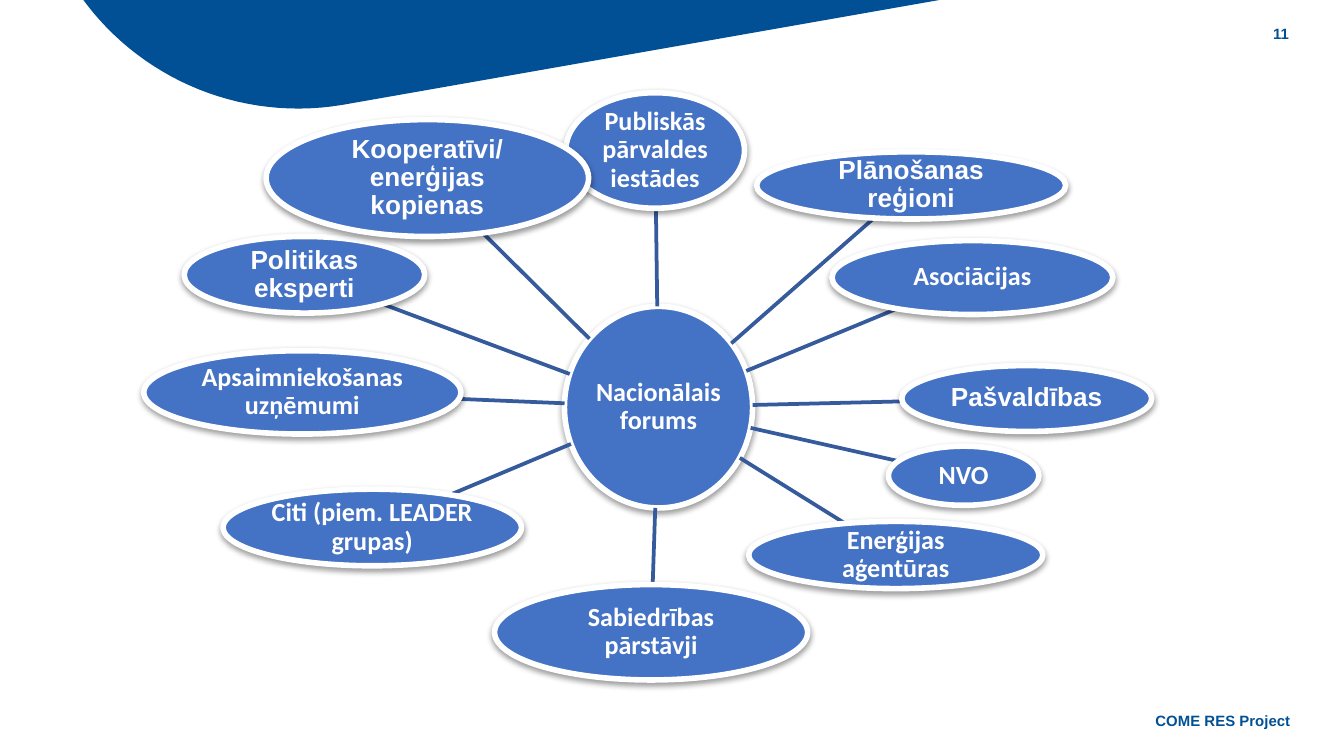
"""Build a hub-and-spoke slide of the participants in a national forum."""
from math import hypot

from lxml import etree
from pptx import Presentation
from pptx import util as u
from pptx.dml.color import RGBColor
from pptx.enum import shapes, text
from pptx.oxml import parse_xml
from pptx.oxml.ns import nsdecls, qn

WIDTH = 10
HEIGHT = WIDTH * 9 / 16
BLUE, SPOKE, BANNER, LABEL, WHITE = "4472C4", "365B9D", "015095", "005095", "FFFFFF"

FORUM = ("Nacionālais forums", "Calibri", 4.2, 2.28, 1.4, 1.5)
PARTICIPANTS = [
    ("Pašvaldības", "Arial", 6.71, 2.72, 1.86, 0.49),
    ("Plānošanas reģioni", "Arial", 5.63, 1.13, 2.3, 0.5),
    ("Asociācijas", "Calibri", 6.19, 1.79, 2.09, 0.55),
    ("Publiskās pārvaldes iestādes", "Calibri", 4.21, 0.69, 1.33, 0.86),
    ("NVO", "Calibri", 6.61, 3.32, 1.12, 0.44),
    ("Enerģijas aģentūras", "Calibri", 5.57, 3.88, 2.19, 0.5),
    ("Sabiedrības pārstāvji", "Calibri", 3.68, 4.35, 2.33, 0.71),
    ("Citi (piem. LEADER grupas)", "Calibri", 1.66, 3.64, 2.22, 0.57),
    ("Apsaimniekošanas uzņēmumi", "Calibri", 1.07, 2.61, 2.36, 0.62),
    ("Politikas eksperti", "Arial", 1.37, 1.76, 1.79, 0.57),
    ("Kooperatīvi/ enerģijas kopienas", "Arial", 1.98, 0.89, 2.4, 0.87),
]
CORNER_LABELS = [("COME RES Project", 7.79, 5.21, 1.91, 0.3), ("11", 7.36, 0.1, 2.33, 0.3)]
BANNER_EDGES = [(-0.31, -4.16), (9.38, -4.16), (9.38, -0.42)]
BANNER_CURVE = [(2.55, 0.78), (1.48, 0.96), (0.46, 0.25), (0.27, -0.82)]
CURVE_STEPS = 40


def color(value):
    return RGBColor.from_string(value)


def inches(*values):
    return [u.Inches(value) for value in values]


def write(frame, words, font, size, fill, align):
    frame.word_wrap = True
    frame.vertical_anchor = text.MSO_ANCHOR.MIDDLE
    paragraph = frame.paragraphs[0]
    paragraph.text = words
    paragraph.alignment = align
    paragraph.font.name = font
    paragraph.font.size = u.Pt(size)
    paragraph.font.bold = True
    paragraph.font.color.rgb = color(fill)
    return paragraph


def bezier(points, t):
    weights = ((1 - t) ** 3, 3 * t * (1 - t) ** 2, 3 * t * t * (1 - t), t ** 3)
    return tuple(sum(w * p[axis] for w, p in zip(weights, points)) for axis in (0, 1))


def add_banner(slide):
    curve = [bezier(BANNER_CURVE, step / CURVE_STEPS) for step in range(CURVE_STEPS + 1)]
    start, *rest = [inches(*point) for point in BANNER_EDGES + curve]
    builder = slide.shapes.build_freeform(*start)
    builder.add_line_segments(rest, close=True)
    banner = builder.convert_to_shape()
    banner.shadow.inherit = False
    banner.fill.solid()
    banner.fill.fore_color.rgb = color(BANNER)
    banner.line.fill.background()


def add_bubble(slide, bubble):
    words, font, *box = bubble
    oval = slide.shapes.add_shape(shapes.MSO_SHAPE.OVAL, *inches(*box))
    oval.fill.solid()
    oval.fill.fore_color.rgb = color(BLUE)
    oval.line.color.rgb = color(WHITE)
    oval.line.width = u.Pt(3)
    oval.shadow.inherit = False
    oval._element.spPr.find(qn("a:effectLst")).append(parse_xml(
        f'<a:outerShdw {nsdecls("a")} blurRad="40000" dist="20000" dir="5400000" rotWithShape="0">'
        '<a:srgbClr val="000000"><a:alpha val="38000"/></a:srgbClr></a:outerShdw>'))
    frame = oval.text_frame
    frame.margin_left = frame.margin_right = frame.margin_top = frame.margin_bottom = u.Inches(0.01)
    write(frame, words, font, 14, WHITE, text.PP_ALIGN.CENTER).line_spacing = 0.9


def center(bubble):
    left, top, width, height = bubble[2:]
    return left + width / 2, top + height / 2


def rim_toward(bubble, other):
    (x, y), (other_x, other_y) = center(bubble), center(other)
    width, height = bubble[4:]
    dx, dy = other_x - x, other_y - y
    reach = 1 / hypot(dx / (width / 2), dy / (height / 2))
    return x + dx * reach, y + dy * reach


def add_spoke(slide, hub, participant):
    ends = rim_toward(hub, participant) + rim_toward(participant, hub)
    spoke = slide.shapes.add_connector(shapes.MSO_CONNECTOR.STRAIGHT, *inches(*ends))
    spoke.line.color.rgb = color(SPOKE)
    spoke.line.width = u.Pt(2)
    etree.SubElement(spoke._element.spPr, qn("a:effectLst"))


def main():
    deck = Presentation()
    deck.slide_width, deck.slide_height = inches(WIDTH, HEIGHT)
    slide = deck.slides.add_slide(deck.slide_layouts[6])
    add_banner(slide)
    for words, *box in CORNER_LABELS:
        label = slide.shapes.add_textbox(*inches(*box))
        write(label.text_frame, words, "Arial", 8, LABEL, text.PP_ALIGN.RIGHT)
    add_bubble(slide, FORUM)
    for participant in PARTICIPANTS:
        add_spoke(slide, FORUM, participant)
        add_bubble(slide, participant)
    deck.save("out.pptx")


if __name__ == "__main__":
    main()
